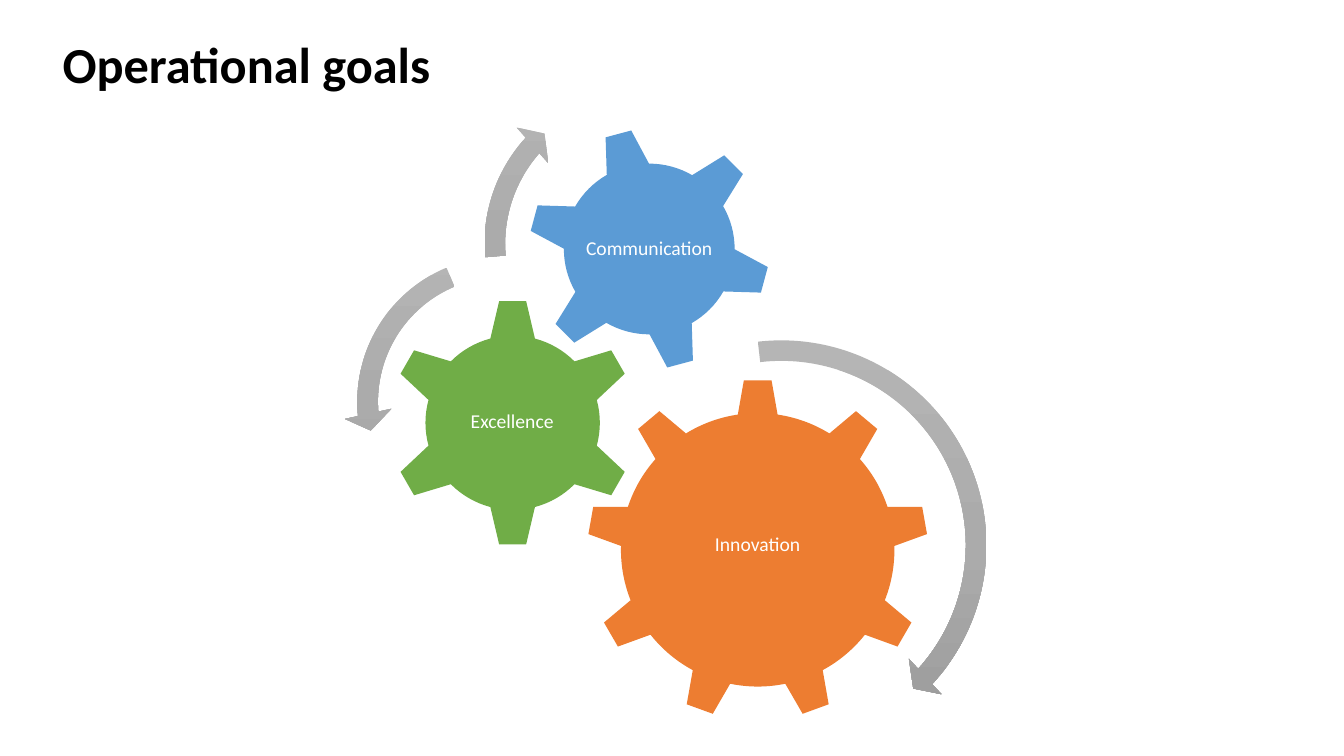
from copy import deepcopy

from pptx import Presentation
from pptx import util as u
from pptx.dml.color import RGBColor
from pptx.enum import shapes, text

PX = 9144
FONT = "Calibri"
COLORS = {
    "title": "000000",
    "label": "FFFFFF",
    "innovation": "ED7D31",
    "excellence": "70AD47",
    "communication": "5B9BD5",
}
ARROW_STOPS = [(0, "B5B5B5"), (0.5, "ABABAB"), (1, "989898")]
SHAPE = shapes.MSO_SHAPE

GEARS = [
    ("Innovation", SHAPE.GEAR_9, (582, 376, 339, 339), 0, (203, 174), 4),
    ("Excellence", SHAPE.GEAR_6, (385, 296, 247, 247), 0, (122, 122), 0),
    ("Communication", SHAPE.GEAR_6, (523, 126, 242, 242), 345, (136, 136), 0),
]
ARROWS = [
    (SHAPE.CIRCULAR_ARROW, (558, 324, 434, 434), (0.047, 2.99, 25.425, 158.057, 0.055)),
    (SHAPE.LEFT_CIRCULAR_ARROW, (341, 241, 315, 315), (0.065, 4.3, 104.891, 148.378, 0.075)),
    (SHAPE.CIRCULAR_ARROW, (467, 72, 340, 340), (0.06, 3.941, 133.138, 105.082, 0.07)),
]


def rgb(value):
    return RGBColor.from_string(value)


def emu(box):
    return [u.Emu(length * PX) for length in box]


def add_shape(parent, kind, box):
    shape = parent.shapes.add_shape(kind, *emu(box))
    shape.shadow.inherit = False
    shape.line.fill.background()
    return shape


def add_text(parent, box, words, size, color, margin=0, bold=False,
             align=text.PP_ALIGN.LEFT, anchor=text.MSO_ANCHOR.TOP):
    frame = parent.shapes.add_textbox(*emu(box)).text_frame
    frame.word_wrap = True
    frame.vertical_anchor = anchor
    frame.margin_left = frame.margin_right = u.Emu(margin * PX)
    frame.margin_top = frame.margin_bottom = u.Emu(margin * PX)
    frame.text = words
    paragraph = frame.paragraphs[0]
    paragraph.alignment = align
    paragraph.line_spacing = 0.9
    font = paragraph.runs[0].font
    font.name, font.size, font.bold = FONT, u.Pt(size), bold
    font.color.rgb = rgb(color)


def add_gear(parent, box, kind, label, rotation, label_size, lift):
    gear = add_shape(parent, kind, box)
    gear.rotation = rotation
    gear.fill.solid()
    gear.fill.fore_color.rgb = rgb(COLORS[label.lower()])
    left, top, width, height = box
    label_width, label_height = label_size
    label_box = (
        left + (width - label_width) // 2,
        top + (height - label_height) // 2 - lift,
        label_width,
        label_height,
    )
    add_text(parent, label_box, label, 14, COLORS["label"], margin=2,
             align=text.PP_ALIGN.CENTER, anchor=text.MSO_ANCHOR.MIDDLE)


def add_arrow(parent, box, kind, adjustments):
    arrow = add_shape(parent, kind, box)
    for index, value in enumerate(adjustments):
        arrow.adjustments[index] = value
    arrow.fill.gradient()
    arrow.fill.gradient_angle = 270
    stop_list = arrow.fill._fill._gradFill.gsLst
    stop_list.insert(1, deepcopy(stop_list[0]))
    for stop, (position, color) in zip(arrow.fill.gradient_stops, ARROW_STOPS):
        stop.position = position
        stop.color.rgb = rgb(color)


def add_gear_diagram(slide):
    group = slide.shapes.add_group_shape()
    for label, kind, box, rotation, label_size, lift in GEARS:
        add_gear(group, box, kind, label, rotation, label_size, lift)
    for kind, box, adjustments in ARROWS:
        add_arrow(group, box, kind, adjustments)


def main():
    presentation = Presentation()
    presentation.slide_width, presentation.slide_height = emu((1333, 750))
    slide = presentation.slides.add_slide(presentation.slide_layouts[6])
    add_text(slide, (62, 40, 1209, 55), "Operational goals", 36,
             COLORS["title"], bold=True)
    add_gear_diagram(slide)
    presentation.save("out.pptx")


if __name__ == "__main__":
    main()
